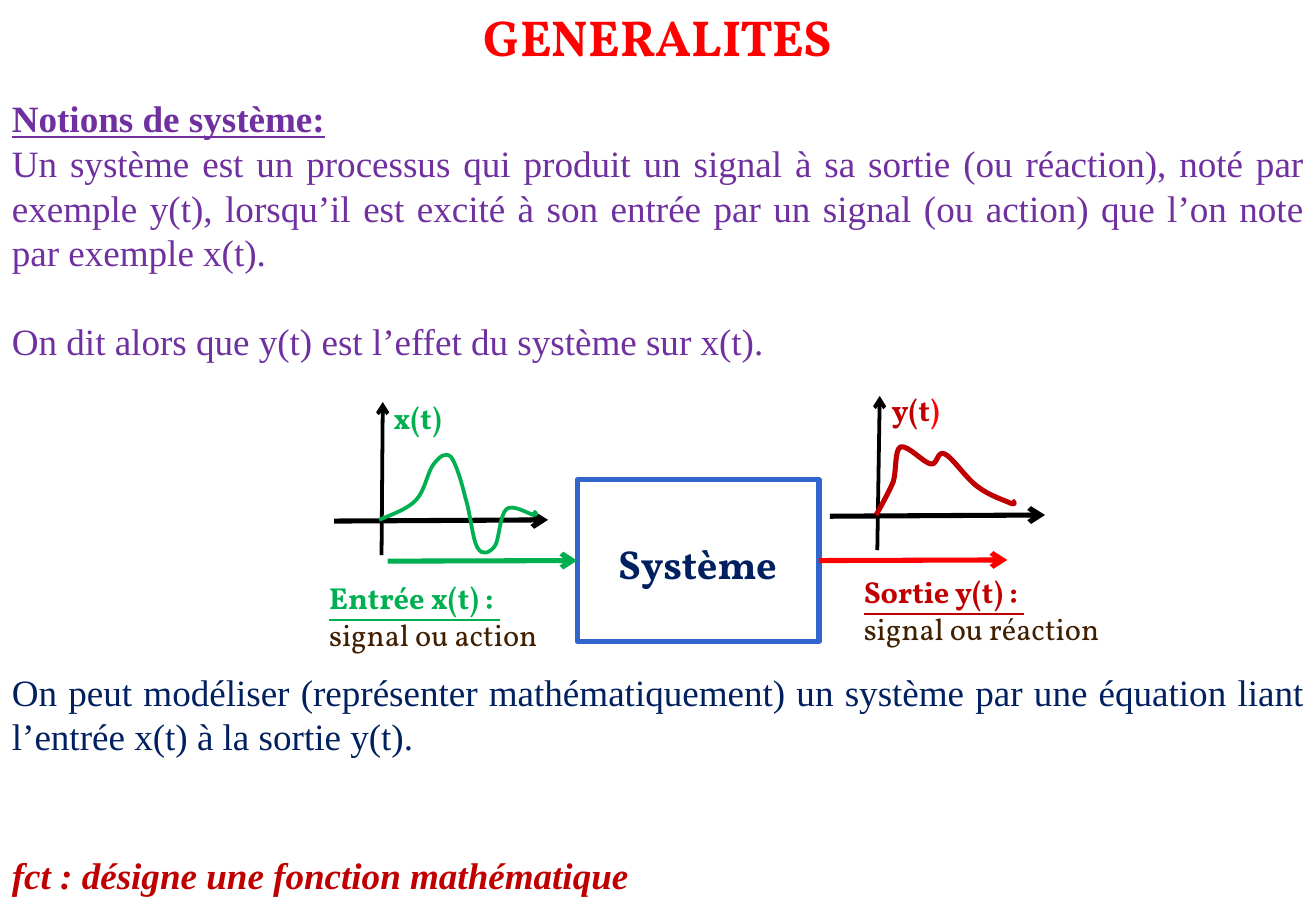
import pptx
import pptx.dml.color
import pptx.enum.shapes
import pptx.enum.text
import pptx.oxml
import pptx.oxml.ns
import pptx.util

RGBColor = pptx.dml.color.RGBColor
RED = RGBColor(0xFF, 0x00, 0x00)
DARK_RED = RGBColor(0xC0, 0x00, 0x00)
GREEN = RGBColor(0x00, 0xB0, 0x50)
PURPLE = RGBColor(0x70, 0x30, 0xA0)
NAVY = RGBColor(0x00, 0x20, 0x60)
BROWN = RGBColor(0x40, 0x20, 0x00)
BLUE = RGBColor(0x33, 0x66, 0xCC)
BLACK = RGBColor(0x00, 0x00, 0x00)
WHITE = RGBColor(0xFF, 0xFF, 0xFF)

EMU_PER_PX = 9144  # 100 px to the inch
WIDTH, HEIGHT = 1083, 750
BODY_FONT, DISPLAY_FONT = "Times New Roman", "Vollkorn"
BODY_SIZE, BODY_PITCH = 22, 26.4

TITLE = "GENERALITES"
TITLE_BOX = (0, 0, WIDTH, 61)

# top, height, [(text, format, space before in points)], justified
BODY_BLOCKS = [
    (74, 232, [
        ("Notions de système:", dict(color=PURPLE, bold=True, underline=True), 0),
        ("Un système est un processus qui produit un signal à sa sortie (ou réaction), "
         "noté par exemple y(t), lorsqu’il est excité à son entrée par un signal "
         "(ou action) que l’on note par exemple x(t).", dict(color=PURPLE), 0),
        ("On dit alors que y(t) est l’effet du système sur x(t).",
         dict(color=PURPLE), BODY_PITCH),
    ], True),
    (546, 84, [
        ("On peut modéliser (représenter mathématiquement) un système par une "
         "équation liant l’entrée x(t) à la sortie y(t). ", dict(color=NAVY), 0),
    ], True),
    (697, 47, [
        ("fct : désigne une fonction mathématique",
         dict(color=DARK_RED, bold=True, italic=True), 0),
    ], False),
]

SYSTEM_BOX = (475, 395, 199, 133)
SYSTEM_LABEL_BOX = (476, 439, 201, 50)
INPUT_START, OUTPUT_END = (319, 462), (829, 461)

# start, end, width in points
AXES = [
    ((314, 457), (315, 331), 2.25),
    ((275, 429), (451, 428), 3),
    ((722, 453), (724, 326), 2.25),
    ((683, 425), (860, 424), 3),
]

# Bézier points: the start, then two handles and an end for each segment
INPUT_CURVE = [
    (312, 428), (324, 423), (336, 419), (343, 411), (350, 403), (352, 388), (357, 382),
    (362, 376), (366, 372), (371, 376), (375, 381), (380, 397), (383, 410),
    (387, 422), (389, 445), (393, 451), (397, 458), (403, 455), (407, 450),
    (411, 445), (411, 424), (417, 419), (422, 415), (435, 423), (439, 424),
    (443, 424), (441, 422), (439, 421),
]
OUTPUT_CURVE = [
    (721, 424), (726, 415), (731, 406), (735, 397), (738, 388), (736, 371), (741, 368),
    (747, 366), (760, 381), (766, 382), (772, 383), (771, 370), (778, 374),
    (784, 377), (796, 395), (805, 401), (814, 408), (827, 412), (831, 414),
    (836, 416), (835, 414), (833, 412),
]
CURVES = [(INPUT_CURVE, GREEN, 2.25), (OUTPUT_CURVE, DARK_RED, 3)]

# box, wrapped, paragraphs made of (text, format) runs
LABELS = [
    ((261, 472, 208, 71), True, [
        [("Entrée x(t) : ", dict(color=GREEN, bold=True, underline=True))],
        [("signal ou action", dict(color=BROWN))],
    ]),
    ((701, 467, 225, 71), True, [
        [("Sortie y(t) : ", dict(color=DARK_RED, bold=True, underline=True))],
        [("signal ou réaction", dict(color=BROWN))],
    ]),
    ((314, 324, 60, 40), False, [[("x(t)", dict(color=GREEN, bold=True))]]),
    ((724, 317, 60, 40), False, [[("y(t", dict(color=DARK_RED, bold=True)),
                                  (")", dict(color=RED, bold=True))]]),
]


def px(*lengths):
    return [pptx.util.Emu(round(length * EMU_PER_PX)) for length in lengths]


def add_run(paragraph, text, *, color, size=18, font=DISPLAY_FONT,
            bold=False, italic=False, underline=False):
    run = paragraph.add_run()
    run.text = text
    run.font.size = pptx.util.Pt(size)
    run.font.name = font
    run.font.bold, run.font.italic, run.font.underline = bold, italic, underline
    run.font.color.rgb = color


def add_text_frame(slide, box, wrapped=True):
    frame = slide.shapes.add_textbox(*px(*box)).text_frame
    frame.word_wrap = wrapped
    frame.auto_size = pptx.enum.text.MSO_AUTO_SIZE.SHAPE_TO_FIT_TEXT
    return frame


def paragraphs_for(frame, items):
    """Yield a paragraph of the frame with each item."""
    for index, item in enumerate(items):
        yield (frame.add_paragraph() if index else frame.paragraphs[0]), item


def set_line(shape, color, width):
    shape.line.color.rgb = color
    shape.line.width = pptx.util.Pt(width)


def add_arrow(slide, start, end, color, width):
    arrow = slide.shapes.add_connector(
        pptx.enum.shapes.MSO_CONNECTOR.STRAIGHT, *px(*start, *end))
    set_line(arrow, color, width)
    properties = arrow._element.spPr
    line = properties.find(pptx.oxml.ns.qn("a:ln"))
    line.append(pptx.oxml.parse_xml(
        f'<a:tailEnd {pptx.oxml.ns.nsdecls("a")} type="arrow"/>'))
    properties.append(pptx.oxml.parse_xml(
        f'<a:effectLst {pptx.oxml.ns.nsdecls("a")}/>'))
    return arrow


def add_curve(slide, points, color, width):
    """Draw the points as an outline, then turn each three segments into one Bézier."""
    builder = slide.shapes.build_freeform(*px(*points[0]))
    builder.add_line_segments([px(*point) for point in points[1:]], close=False)
    curve = builder.convert_to_shape()
    segments = list(curve._element.iter(pptx.oxml.ns.qn("a:lnTo")))
    for first in range(0, len(segments), 3):
        bezier = pptx.oxml.parse_xml(
            f'<a:cubicBezTo {pptx.oxml.ns.nsdecls("a")}/>')
        segments[first].addprevious(bezier)
        for segment in segments[first:first + 3]:
            bezier.append(segment[0])
            segment.getparent().remove(segment)
    curve.fill.background()
    curve.shadow.inherit = False
    set_line(curve, color, width)


def add_title(slide):
    title = slide.shapes.title
    title.left, title.top, title.width, title.height = px(*TITLE_BOX)
    frame = title.text_frame
    frame.auto_size = pptx.enum.text.MSO_AUTO_SIZE.NONE
    frame.vertical_anchor = pptx.enum.text.MSO_ANCHOR.TOP
    frame.paragraphs[0].alignment = pptx.enum.text.PP_ALIGN.CENTER
    add_run(frame.paragraphs[0], TITLE, color=RED, size=30, bold=True)


def add_body(slide):
    for top, height, items, justified in BODY_BLOCKS:
        frame = add_text_frame(slide, (0, top, WIDTH, height))
        for paragraph, (text, style, space) in paragraphs_for(frame, items):
            paragraph.line_spacing = pptx.util.Pt(BODY_PITCH)
            paragraph.space_before = pptx.util.Pt(space)
            if justified:
                paragraph.alignment = pptx.enum.text.PP_ALIGN.JUSTIFY
            add_run(paragraph, text, size=BODY_SIZE, font=BODY_FONT, **style)


def add_diagram(slide):
    left, top, width, height = SYSTEM_BOX
    system = slide.shapes.add_shape(
        pptx.enum.shapes.MSO_SHAPE.RECTANGLE, *px(*SYSTEM_BOX))
    system.shadow.inherit = False
    system.fill.solid()
    system.fill.fore_color.rgb = WHITE
    set_line(system, BLUE, 3)
    middle = top + height / 2
    add_arrow(slide, INPUT_START, (left, middle), GREEN, 3).end_connect(system, 1)
    add_arrow(slide, (left + width, middle), OUTPUT_END, RED, 3).begin_connect(system, 3)

    paragraph = add_text_frame(slide, SYSTEM_LABEL_BOX).paragraphs[0]
    paragraph.alignment = pptx.enum.text.PP_ALIGN.CENTER
    add_run(paragraph, "Système", color=NAVY, size=24, bold=True)
    add_run(paragraph, " ", color=BROWN, bold=True)

    for start, end, line_width in AXES:
        add_arrow(slide, start, end, BLACK, line_width)
    for points, color, line_width in CURVES:
        add_curve(slide, points, color, line_width)
    for box, wrapped, lines in LABELS:
        for paragraph, runs in paragraphs_for(add_text_frame(slide, box, wrapped), lines):
            for text, style in runs:
                add_run(paragraph, text, **style)


def main():
    presentation = pptx.Presentation()
    presentation.slide_width, presentation.slide_height = px(WIDTH, HEIGHT)
    slide = presentation.slides.add_slide(presentation.slide_layouts[5])
    add_title(slide)
    add_body(slide)
    add_diagram(slide)
    presentation.save("out.pptx")


if __name__ == "__main__":
    main()
